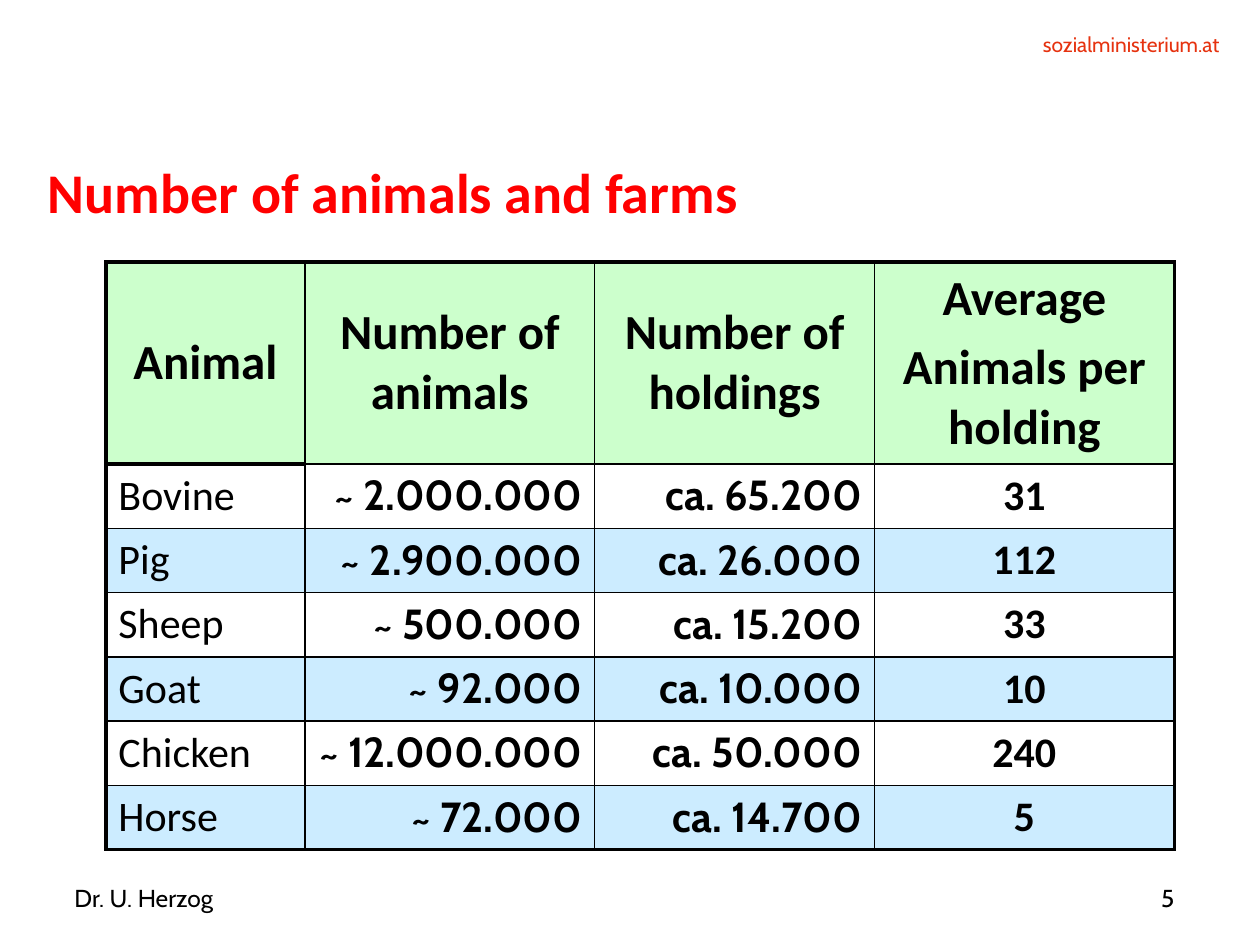
from lxml.etree import SubElement
from pptx import Presentation
from pptx.dml.color import RGBColor
from pptx.enum.text import MSO_ANCHOR, MSO_AUTO_SIZE, PP_ALIGN
from pptx.oxml.ns import qn
from pptx.util import Inches, Pt

COLORS = {"black": "000000", "red": "FF0000", "brand": "E6320F",
          "head": "CCFFCC", "band": "CCECFF", "white": "FFFFFF"}
LEFT, MID, RIGHT = PP_ALIGN.LEFT, PP_ALIGN.CENTER, PP_ALIGN.RIGHT
HEAD = ["Animal", "Number of animals", "Number of holdings",
        "Average\nAnimals per holding"]
ROWS = [
    ["Bovine", "~ 2.000.000", "ca. 65.200", "31"],
    ["Pig", "~ 2.900.000", "ca. 26.000", "112"],
    ["Sheep", "~ 500.000", "ca. 15.200", "33"],
    ["Goat", "~ 92.000", "ca. 10.000", "10"],
    ["Chicken", "~ 12.000.000", "ca. 50.000", "240"],
    ["Horse", "~ 72.000", "ca. 14.700", "5"],
]
WIDTHS = [1.58, 2.3, 2.22, 2.38]
ALIGNS = [LEFT, RIGHT, RIGHT, MID]
FONTS = ["Calibri", "Cabin", "Cabin", "Calibri"]


def write(frame, text, align, color="black", **form):
    """Put text into a frame and format each paragraph."""
    frame.text = text
    for num, par in enumerate(frame.paragraphs):
        par.alignment = align
        if num:
            par.space_before = Pt(5.6)
        font = par.runs[0].font
        font.color.rgb = RGBColor.from_string(COLORS[color])
        for key, val in form.items():
            setattr(font, key, val)


def fit(frame, anchor):
    """Clear the margins of a frame and set its wrap and anchor."""
    form = {"margin_left": 0, "margin_top": 0, "margin_right": 0,
            "margin_bottom": 0, "word_wrap": True,
            "auto_size": MSO_AUTO_SIZE.NONE, "vertical_anchor": anchor}
    for key, val in form.items():
        setattr(frame, key, val)


def add_title(slide, text):
    """Place and format the title."""
    title = slide.shapes.title
    place = {"left": 0.38, "top": 1.37, "width": 6.22, "height": 1.25}
    for key, val in place.items():
        setattr(title, key, Inches(val))
    fit(title.text_frame, MSO_ANCHOR.TOP)
    write(title.text_frame, text, LEFT, "red",
          name="Calibri", size=Pt(32), bold=True)
    title.text_frame.paragraphs[0].line_spacing = Pt(30)


def add_label(slide, box, text, align, size, color="black",
              anchor=MSO_ANCHOR.MIDDLE):
    """Add a small line of text."""
    frame = slide.shapes.add_textbox(*map(Inches, box)).text_frame
    fit(frame, anchor)
    write(frame, text, align, color, name="Cabin", size=Pt(size))


def add_edge(cell, side, width):
    """Draw one border of a cell."""
    props = cell._tc.get_or_add_tcPr()
    line = SubElement(props, qn(f"a:ln{side}"), w=str(Pt(width)))
    fill = SubElement(line, qn("a:solidFill"))
    SubElement(fill, qn("a:srgbClr"), val=COLORS["black"])


def style_cell(cell, row, col):
    """Set the borders and the fill of a cell."""
    thick = {"L": col == 0, "R": col == len(HEAD) - 1,
             "T": row == 0 or (row, col) == (1, 0),
             "B": row == len(ROWS) or (row, col) == (0, 0)}
    for side, bold in thick.items():
        add_edge(cell, side, 2.25 if bold else 1)
    shade = "head" if row == 0 else "white" if row % 2 else "band"
    cell.fill.solid()
    cell.fill.fore_color.rgb = RGBColor.from_string(COLORS[shade])


def add_grid(slide):
    """Add the table of animals and holdings."""
    high = [1.6] + [0.51] * len(ROWS)
    box = map(Inches, (0.84, 2.08, sum(WIDTHS), sum(high)))
    table = slide.shapes.add_table(len(high), len(WIDTHS), *box).table
    table.first_row = table.horz_banding = False
    for part, width in zip(table.columns, WIDTHS):
        part.width = Inches(width)
    for row, texts in enumerate([HEAD] + ROWS):
        table.rows[row].height = Inches(high[row])
        for col, text in enumerate(texts):
            cell = table.cell(row, col)
            style_cell(cell, row, col)
            if row == 0:
                cell.vertical_anchor = MSO_ANCHOR.MIDDLE
                write(cell.text_frame, text, MID,
                      name="Calibri", size=Pt(28), bold=True)
            else:
                write(cell.text_frame, text, ALIGNS[col],
                      name=FONTS[col], size=Pt(24), bold=col > 0)


def main():
    """Build and save the slide."""
    deck = Presentation()
    deck.slide_width, deck.slide_height = Inches(10), Inches(7.5)
    slide = deck.slides.add_slide(deck.slide_layouts[5])
    add_label(slide, (7.27, 0.25, 2.41, 0.2), "sozialministerium.at",
              RIGHT, 12, "brand", MSO_ANCHOR.TOP)
    add_title(slide, "Number of animals and farms")
    add_grid(slide)
    add_label(slide, (0.59, 6.98, 7.52, 0.29), "Dr. U. Herzog", LEFT, 14)
    add_label(slide, (8.27, 6.98, 1.05, 0.29), "5", RIGHT, 14)
    deck.save("out.pptx")


if __name__ == "__main__":
    main()
